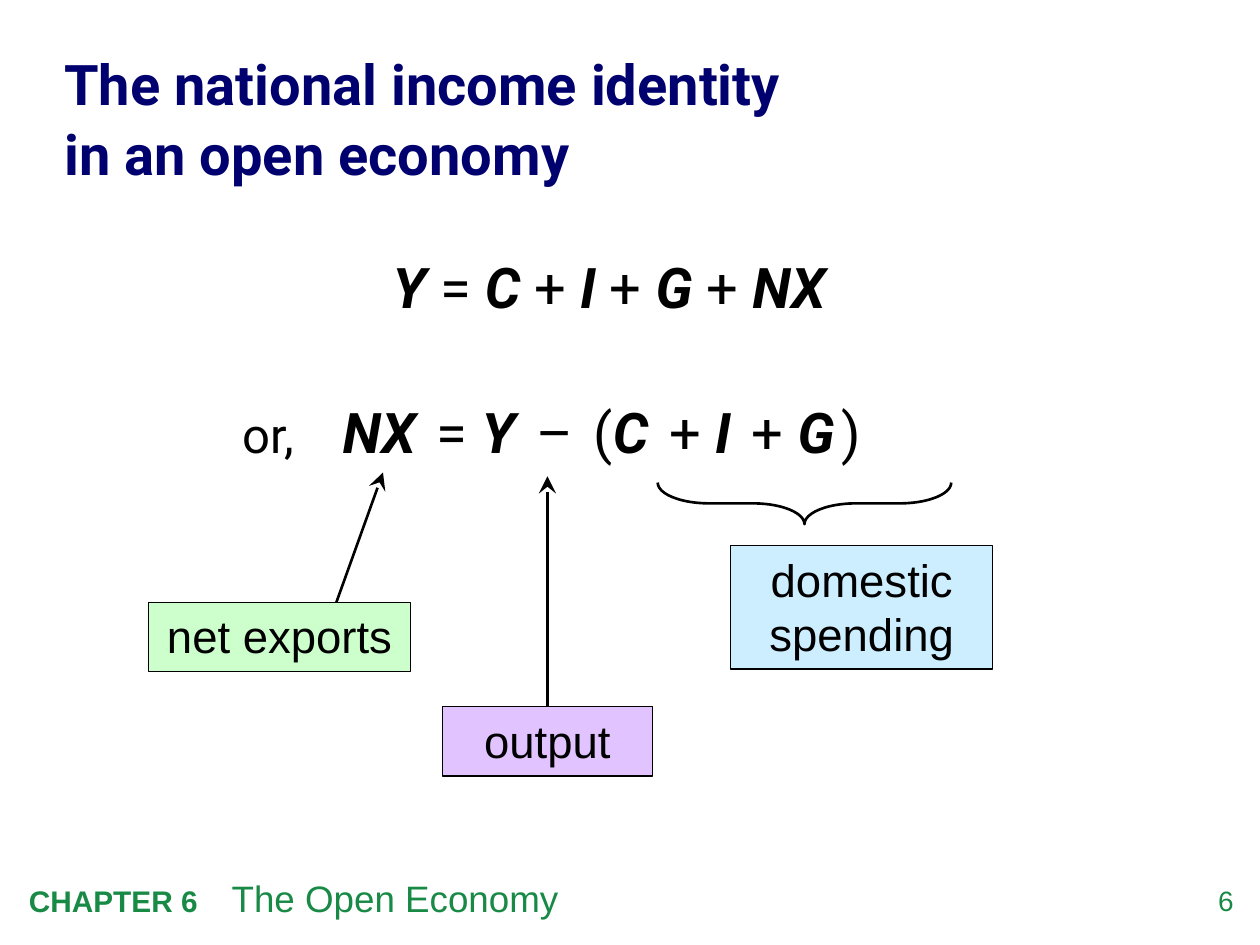
from dataclasses import dataclass

from lxml import etree
from pptx import Presentation
from pptx import util as u
from pptx.dml.color import RGBColor
from pptx.enum import shapes, text
from pptx.oxml import ns


@dataclass(frozen=True)
class Theme:
    ink: str = "000000"
    title: str = "00006E"
    footer: str = "198A46"
    green: str = "CCFFCC"
    blue: str = "CDEEFF"
    violet: str = "E1C3FF"
    heading_font: str = "Roboto"
    label_font: str = "Arial"
    big: int = 32
    lead: int = 28
    label: int = 26
    topic: int = 21
    chapter: int = 17
    number: int = 16


THEME = Theme()


def inches(box):
    return [u.Inches(length) for length in box]


def color(code):
    return RGBColor.from_string(code)


def add_span(para, words, size, font, ink=THEME.ink, bold=False, italic=False, tracking=0):
    span = para.add_run()
    span.text = words
    span.font.size = u.Pt(size)
    span.font.name = font
    span.font.color.rgb = color(ink)
    span.font.bold = bold
    span.font.italic = italic
    if tracking:
        span.font._element.set("spc", str(tracking * 100))


def add_text(page, box, align=text.PP_ALIGN.LEFT, middle=False, inset=True, spacing=1.0):
    frame = page.shapes.add_textbox(*inches(box)).text_frame
    frame.word_wrap = True
    frame.vertical_anchor = text.MSO_ANCHOR.MIDDLE if middle else text.MSO_ANCHOR.TOP
    if not inset:
        frame.margin_left = frame.margin_right = 0
        frame.margin_top = frame.margin_bottom = 0
    para = frame.paragraphs[0]
    para.alignment = align
    para.line_spacing = spacing
    return para


def add_tab_stop(para, position):
    properties = para._p.get_or_add_pPr()
    stops = etree.SubElement(properties, ns.qn("a:tabLst"))
    etree.SubElement(stops, ns.qn("a:tab"), pos=str(u.Inches(position)), algn="l")


def add_math(para, tokens):
    for token in tokens:
        variable = token.isalpha()
        add_span(para, token, THEME.big, THEME.heading_font,
                 bold=variable, italic=variable, tracking=4 if token == " " else 0)


def add_title(page, box):
    para = add_text(page, box, middle=True, inset=False, spacing=1.05)
    style = (THEME.big, THEME.heading_font, THEME.title, True)
    add_span(para, "The national income identity", *style)
    para.add_line_break()
    add_span(para, "in an open economy", *style)


def add_identity(page, box):
    para = add_text(page, box, text.PP_ALIGN.CENTER, middle=True, spacing=1.05)
    add_math(para, ["Y", " = ", "C", " + ", "I", " + ", "G", " + ", "NX"])


def add_rearranged(page, box):
    para = add_text(page, box, spacing=0.9)
    add_tab_stop(para, 0.79)
    add_span(para, "or,\t", THEME.lead, THEME.heading_font)
    add_math(para, ["NX", " ", "= ", "Y", " ", "–", " ", "(", "C", " ", "+ ",
                    "I", " ", "+ ", "G"])
    add_span(para, " ", THEME.number, THEME.heading_font)
    add_math(para, [")"])


def add_label(page, box, words, fill):
    label = page.shapes.add_shape(shapes.MSO_SHAPE.RECTANGLE, *inches(box))
    label.shadow.inherit = False
    label.fill.solid()
    label.fill.fore_color.rgb = color(fill)
    label.line.color.rgb = color(THEME.ink)
    label.line.width = u.Pt(0.75)
    frame = label.text_frame
    frame.word_wrap = True
    frame.vertical_anchor = text.MSO_ANCHOR.TOP
    para = frame.paragraphs[0]
    para.alignment = text.PP_ALIGN.CENTER
    add_span(para, words, THEME.label, THEME.label_font)
    return label


def add_arrow(page, start, end):
    arrow = page.shapes.add_connector(shapes.MSO_CONNECTOR.STRAIGHT, *inches(start + end))
    arrow.line.color.rgb = color(THEME.ink)
    arrow.line.width = u.Pt(1.5)
    etree.SubElement(arrow.line._get_or_add_ln(), ns.qn("a:tailEnd"), type="stealth",
                     w="lg", len="lg")
    etree.SubElement(arrow._element.spPr, ns.qn("a:effectLst"))
    return arrow


def add_brace(page, box):
    left, top, width, height = box
    upright = (left + (width - height) / 2, top + (height - width) / 2, height, width)
    brace = page.shapes.add_shape(shapes.MSO_SHAPE.LEFT_BRACE, *inches(upright))
    brace.rotation = 270
    brace.adjustments[0] = 1.24
    brace.shadow.inherit = False
    brace.fill.background()
    brace.line.color.rgb = color(THEME.ink)
    brace.line.width = u.Pt(1.5)


def add_callouts(page, box):
    left, top, width, height = box
    bottom = top + height
    add_label(page, (left, top + 1.03, 2.08, 0.55), "net exports", THEME.green)
    add_arrow(page, (left + 1.49, top + 1.03), (left + 1.86, top))

    wide = 2.08
    spending_left = left + width - wide
    add_label(page, (spending_left, top + 0.58, wide, 0.98), "domestic spending", THEME.blue)
    add_brace(page, (spending_left - 0.58, top + 0.08, 2.33, 0.33))

    output = add_label(page, (left + 2.33, bottom - 0.55, 1.67, 0.55), "output", THEME.violet)
    center = left + 2.33 + 1.67 / 2
    arrow = add_arrow(page, (center, bottom - 0.55), (center, top + 0.03))
    arrow.begin_connect(output, 0)


def add_footer(page, box):
    left, top, width, height = box
    para = add_text(page, (left, top, 8.18, height))
    add_tab_stop(para, 1.61)
    add_span(para, "CHAPTER 6\t", THEME.chapter, THEME.label_font, THEME.footer, True)
    add_span(para, "The Open Economy", THEME.topic, THEME.label_font, THEME.footer)
    number = add_text(page, (left + width - 0.55, top + 0.11, 0.55, 0.32),
                      text.PP_ALIGN.RIGHT, inset=False)
    add_span(number, "6", THEME.number, THEME.label_font, THEME.footer)


def main():
    deck = Presentation()
    deck.slide_width, deck.slide_height = u.Inches(10), u.Inches(7.5)
    page = deck.slides.add_slide(deck.slide_layouts[6])
    add_footer(page, (0.13, 6.9, 9.66, 0.45))
    add_title(page, (0.51, 0.41, 9.02, 1.03))
    add_identity(page, (1.84, 1.81, 5.99, 0.89))
    add_rearranged(page, (1.83, 3.17, 6.42, 0.67))
    add_callouts(page, (1.18, 3.75, 6.7, 2.41))
    deck.save("out.pptx")


if __name__ == "__main__":
    main()
